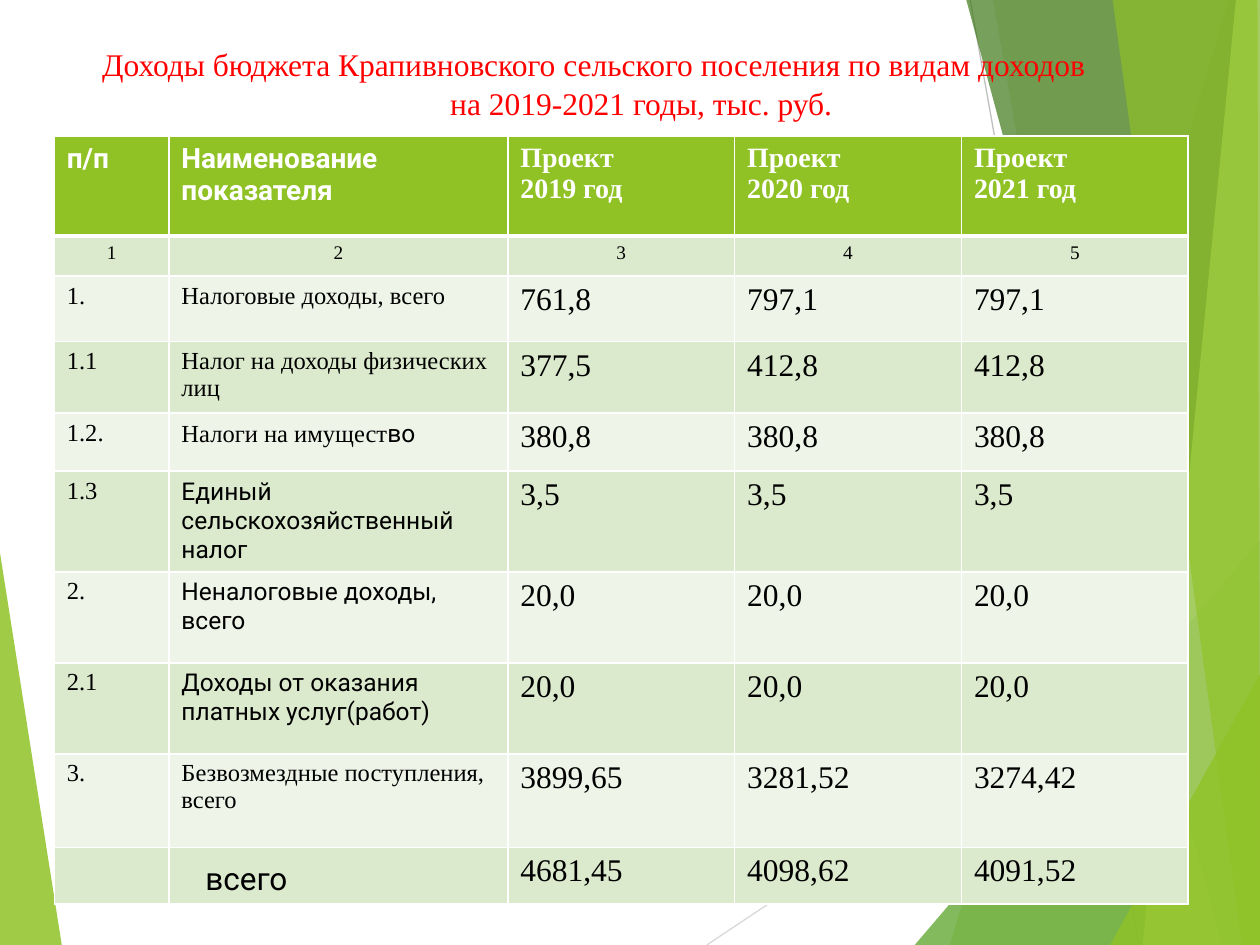
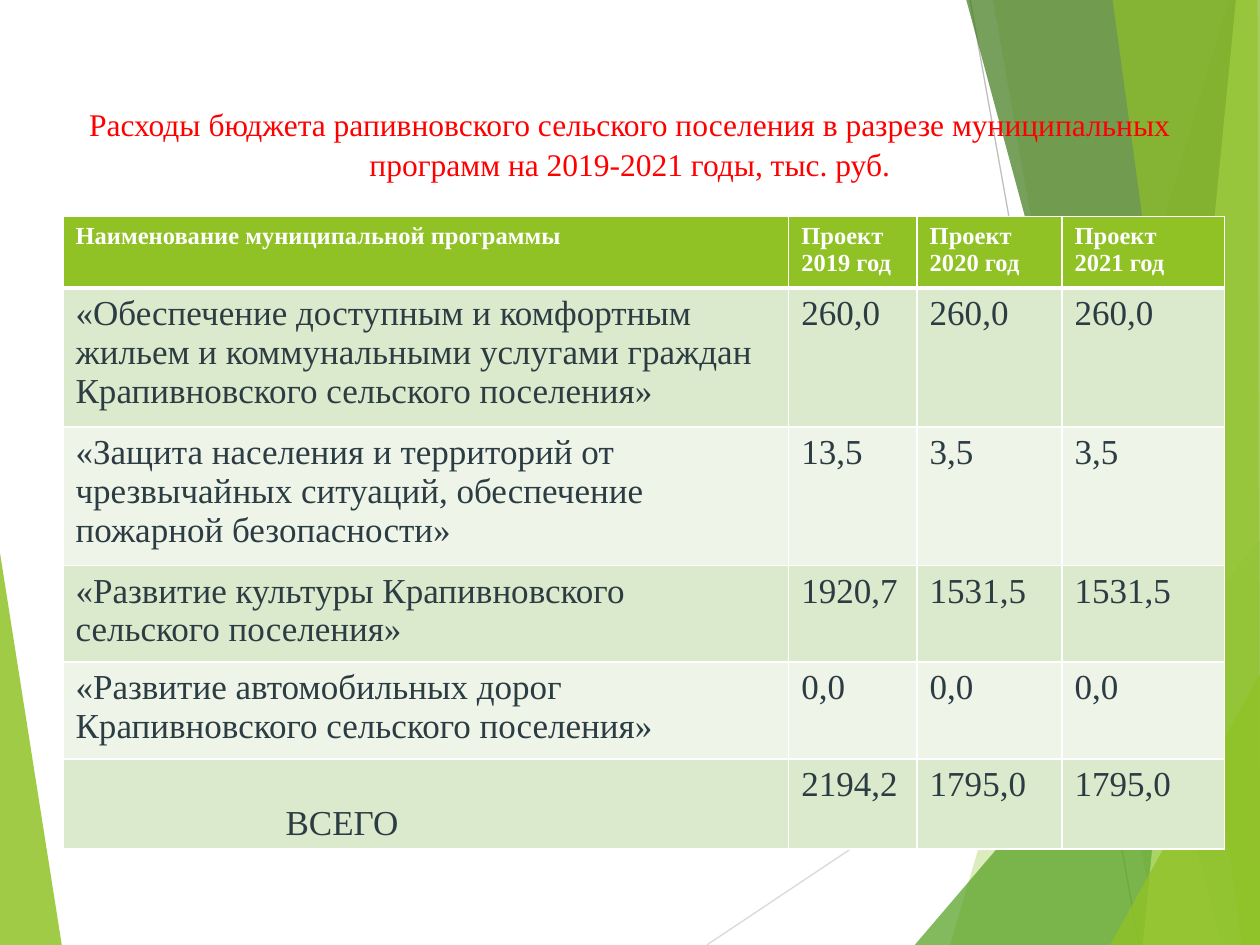
from lxml import etree
from pptx import Presentation
from pptx import util as u
from pptx.dml.color import RGBColor
from pptx.enum import shapes, text
from pptx.oxml import ns

SERIF, SANS = "Times New Roman", "Roboto"
GREEN, WHITE, BLACK, RED, SLATE = "90C226", "FFFFFF", "000000", "FF0000", "2C3C43"
BANDS = ("EEF4E8", "DBE9CD")

# Background facets: colour, opacity in percent, corners in points
FACETS = [
    (GREEN, 85, [(0, 316), (35.3, 540), (0, 540)]),
    (GREEN, 30, [(702, 0), (542.9, 540), (720, 540), (720, 0)]),
    (GREEN, 20, [(567.4, 0), (661.7, 540), (720, 540), (720, 0)]),
    ("54A021", 72, [(522.7, 540), (720, 308.9), (720, 540)]),
    ("3F7819", 70, [(552.2, 0), (698.4, 540), (720, 540), (720, 0)]),
    ("C0E474", 70, [(706.3, 0), (653, 540), (720, 540), (720, 0)]),
    (GREEN, 65, [(635.8, 0), (709.9, 540), (720, 540), (718.6, 0)]),
    (GREEN, 80, [(634.3, 540), (720, 385.2), (720, 540)]),
]
RAYS = [("D9D9D9", (403.9, 540, 720, 329)), ("BFBFBF", (554.4, 0, 650.9, 540))]

# Table rows: height, size in name columns, size in value columns, cells.
# Text after "|" is set in the sans font, "\n" starts a paragraph.
INCOME_ROWS = [
    (57, 16, 16, ["|п/п", "|Наименование показателя",
                  "Проект\n2019 год", "Проект\n2020 год", "Проект\n2021 год"]),
    (23, 11, 11, ["1", "2", "3", "4", "5"]),
    (37.5, 14, 18, ["1.", "Налоговые доходы, всего", "761,8", "797,1", "797,1"]),
    (39.5, 14, 18, ["1.1", "Налог на доходы физических лиц", "377,5", "412,8", "412,8"]),
    (33, 14, 18, ["1.2.", "Налоги на имущест|во", "380,8", "380,8", "380,8"]),
    (57, 14, 18, ["1.3", "|Единый сельскохозяйственный налог", "3,5", "3,5", "3,5"]),
    (52, 14, 18, ["2.", "|Неналоговые доходы, всего", "20,0", "20,0", "20,0"]),
    (52, 14, 18, ["2.1", "|Доходы от оказания платных услуг(работ)",
                  "20,0", "20,0", "20,0"]),
    (53.5, 14, 18, ["3.", "Безвозмездные поступления, всего",
                    "3899,65", "3281,52", "3274,42"]),
    (32.5, 18, 18, ["", "|всего", "4681,45", "4098,62", "4091,52"]),
]
EXPENSE_ROWS = [
    (38, 14, 14, ["Наименование муниципальной программы",
                  "Проект\n2019 год", "Проект\n2020 год", "Проект\n2021 год"]),
    (74, 20, 20, ["«Обеспечение доступным и комфортным жильем и коммунальными услугами "
                  "граждан Крапивновского сельского поселения»", "260,0", "260,0", "260,0"]),
    (74, 20, 20, ["«Защита населения и территорий от чрезвычайных ситуаций, обеспечение "
                  "пожарной безопасности»", "13,5", "3,5", "3,5"]),
    (51.5, 20, 20, ["«Развитие культуры Крапивновского сельского поселения»",
                    "1920,7", "1531,5", "1531,5"]),
    (51.5, 20, 20, ["«Развитие автомобильных дорог Крапивновского сельского поселения»",
                    "0,0", "0,0", "0,0"]),
    (51.5, 20, 20, ["ВСЕГО", "2194,2", "1795,0", "1795,0"]),
]
SLIDES = [
    dict(title="Доходы бюджета Крапивновского сельского поселения по видам доходов\n"
               "на 2019-2021 годы, тыс. руб.",
         title_at=(42.5, 20.9), table_at=(31, 77.8), columns=[65.5, 193.7, 129.6, 129.6, 129.6],
         name_columns=2, rows=INCOME_ROWS, ink=BLACK, total_indent=13.7),
    dict(title="Расходы бюджета рапивновского сельского поселения в разрезе "
               "муниципальных программ на 2019-2021 годы, тыс. руб.",
         title_at=(36, 55.4), table_at=(36, 123.8), columns=[414.7, 73.4, 82.8, 92.9],
         name_columns=1, rows=EXPENSE_ROWS, ink=SLATE, total_indent=120),
]


def rgb(value):
    return RGBColor.from_string(value)


def write(frame, content, align, color, **formats):
    """Fill a text frame, one paragraph a line, switching to the sans font at "|"."""
    for index, line in enumerate(content.split("\n")):
        paragraph = frame.paragraphs[0] if index == 0 else frame.add_paragraph()
        paragraph.alignment = align
        for part, font_name in zip(line.split("|"), (SERIF, SANS)):
            if part:
                run = paragraph.add_run()
                run.text = part
                for name, value in dict(formats, name=font_name).items():
                    setattr(run.font, name, value)
                run.font.color.rgb = rgb(color)


presentation = Presentation()
presentation.slide_width, presentation.slide_height = u.Pt(720), u.Pt(540)

for page in SLIDES:
    slide = presentation.slides.add_slide(presentation.slide_layouts[6])

    for color, ends in RAYS:
        ray = slide.shapes.add_connector(shapes.MSO_CONNECTOR.STRAIGHT, *map(u.Pt, ends))
        ray.line.color.rgb = rgb(color)
        ray.line.width = u.Pt(0.75)
        etree.SubElement(ray._element.spPr, ns.qn("a:effectLst"))

    for color, opacity, corners in FACETS:
        start, *others = [(u.Pt(x), u.Pt(y)) for x, y in corners]
        builder = slide.shapes.build_freeform(*start)
        builder.add_line_segments(others)
        facet = builder.convert_to_shape()
        facet.shadow.inherit = False
        facet.line.fill.background()
        facet.fill.solid()
        facet.fill.fore_color.rgb = rgb(color)
        tint = facet._element.spPr.find(".//" + ns.qn("a:srgbClr"))
        etree.SubElement(tint, ns.qn("a:alpha"), val=str(opacity * 1000))

    title = slide.shapes.add_textbox(*map(u.Pt, (*page["title_at"], 648, 56.9)))
    title.text_frame.word_wrap = True
    write(title.text_frame, page["title"], text.PP_ALIGN.CENTER, RED, size=u.Pt(18))
    for paragraph in title.text_frame.paragraphs:
        paragraph.line_spacing = 1.05
    if len(title.text_frame.paragraphs) > 1:
        first_line = title.text_frame.paragraphs[0]
        first_line.alignment = text.PP_ALIGN.LEFT
        first_line._p.get_or_add_pPr().set("marL", str(u.Pt(8.8)))

    rows, columns = page["rows"], page["columns"]
    size = (sum(columns), sum(row[0] for row in rows))
    table = slide.shapes.add_table(len(rows), len(columns),
                                   *map(u.Pt, (*page["table_at"], *size))).table
    for column, width in zip(table.columns, columns):
        column.width = u.Pt(width)

    for r, (height, name_size, value_size, cells) in enumerate(rows):
        table.rows[r].height = u.Pt(height)
        header = r == 0
        numbering = cells[0] == "1"
        for c, content in enumerate(cells):
            cell = table.cell(r, c)
            write(cell.text_frame, content,
                  text.PP_ALIGN.CENTER if numbering else text.PP_ALIGN.LEFT,
                  WHITE if header else page["ink"], bold=header,
                  size=u.Pt(name_size if c < page["name_columns"] else value_size))
            properties = cell._tc.get_or_add_tcPr()
            for side in ("L", "R", "T", "B"):
                thick = (r, side) in ((0, "B"), (1, "T"))
                border = etree.SubElement(properties, ns.qn("a:ln" + side),
                                          w=str(u.Pt(3 if thick else 1)))
                fill = etree.SubElement(border, ns.qn("a:solidFill"))
                etree.SubElement(fill, ns.qn("a:srgbClr"), val=WHITE)
            cell.fill.solid()
            cell.fill.fore_color.rgb = rgb(GREEN if header else BANDS[r % 2])

    total = table.cell(len(rows) - 1, page["name_columns"] - 1)
    total.vertical_anchor = text.MSO_ANCHOR.BOTTOM
    total.text_frame.paragraphs[0]._p.get_or_add_pPr().set(
        "marL", str(u.Pt(page["total_indent"])))

presentation.save("out.pptx")
